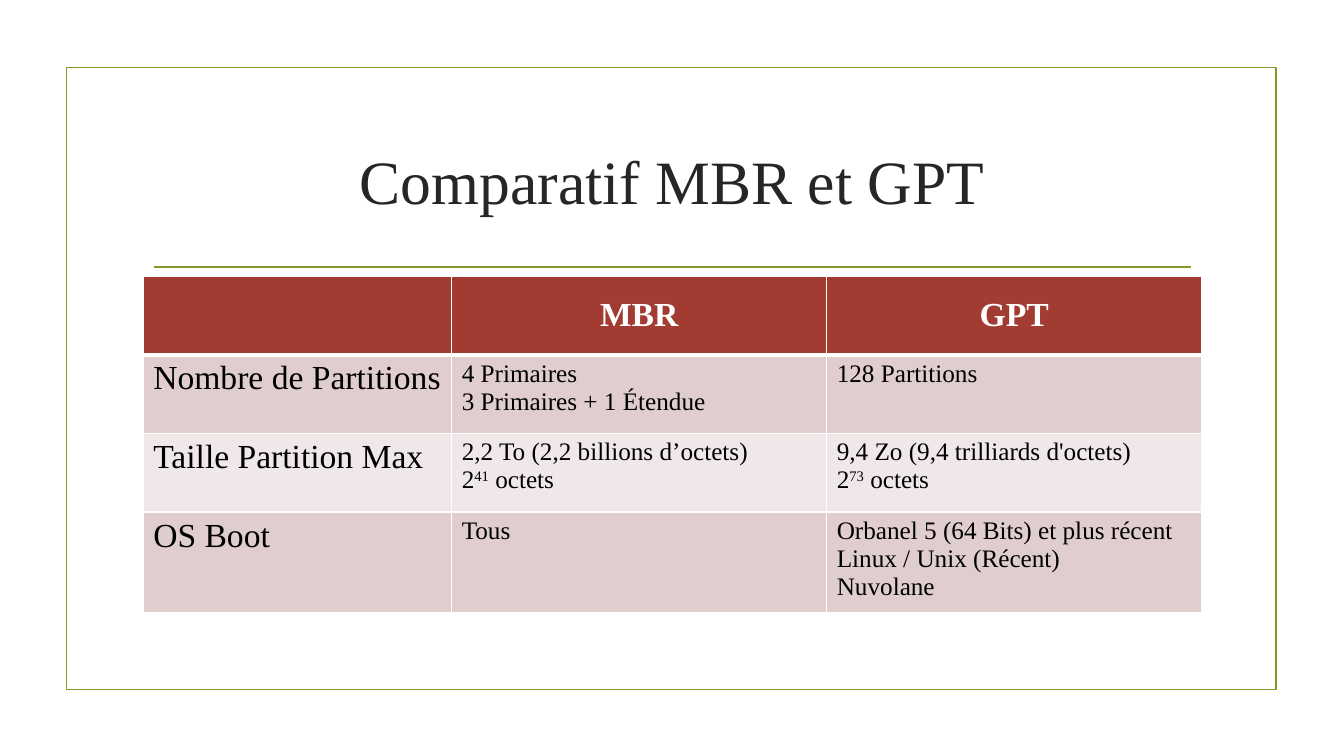
from lxml import etree
from pptx import Presentation
from pptx.dml.color import RGBColor
from pptx.enum.shapes import MSO_CONNECTOR, MSO_SHAPE
from pptx.enum.text import MSO_ANCHOR, PP_ALIGN
from pptx.oxml.ns import qn
from pptx.util import Inches, Pt

RECT = MSO_SHAPE.RECTANGLE
STRAIGHT = MSO_CONNECTOR.STRAIGHT
MIDDLE, TOP = MSO_ANCHOR.MIDDLE, MSO_ANCHOR.TOP
CENTER, LEFT = PP_ALIGN.CENTER, PP_ALIGN.LEFT

OLIVE = RGBColor(0x83, 0x99, 0x2A)
DARK = RGBColor(0x26, 0x26, 0x26)
BLACK = RGBColor(0, 0, 0)
WHITE = RGBColor(0xFF, 0xFF, 0xFF)
RED = RGBColor(0xA2, 0x3C, 0x33)
ROSE = RGBColor(0xE0, 0xCE, 0xCE)
PALE = RGBColor(0xF0, 0xE8, 0xE8)

FONT = "Times New Roman"
COLS = [3.06, 3.72, 3.72]
ROW = 0.78
# One line per paragraph; text between ^ marks is superscript
ROWS = [
    ["", "MBR", "GPT"],
    ["Nombre de Partitions", "4 Primaires\n3 Primaires + 1 Étendue",
     "128 Partitions"],
    ["Taille Partition Max",
     "2,2 To (2,2 billions d’octets)\n2^41^ octets",
     "9,4 Zo (9,4 trilliards d'octets)\n2^73^ octets"],
    ["OS Boot", "Tous",
     "Orbanel 5 (64 Bits) et plus récent\nLinux / Unix (Récent)\nNuvolane"],
]


def add_frame(slide):
    frame = slide.shapes.add_shape(
        RECT, Inches(0.66), Inches(0.67), Inches(12), Inches(6.17))
    frame.shadow.inherit = False
    frame.fill.background()
    frame.line.color.rgb = OLIVE
    frame.line.width = Pt(1.25)


def add_rule(slide):
    y = Inches(2.65)
    rule = slide.shapes.add_connector(
        STRAIGHT, Inches(1.53), y, Inches(11.81), y)
    rule.line.color.rgb = OLIVE
    rule.line.width = Pt(1.25)
    etree.SubElement(rule._element.spPr, qn("a:effectLst"))


def write(frame, text, size, color, align, bold=False):
    frame.text = text.replace("^", "")
    for para, line in zip(frame.paragraphs, text.split("\n")):
        para.alignment = align
        if "^" in line:
            para.clear()
            for i, part in enumerate(line.split("^")):
                run = para.add_run()
                run.text = part
                if i % 2:
                    run._r.get_or_add_rPr().set("baseline", "30000")
        for run in para.runs:
            run.font.name = FONT
            run.font.size = Pt(size)
            run.font.bold = bold
            run.font.color.rgb = color


def add_title(slide, text):
    box = slide.shapes.add_textbox(
        Inches(1.42), Inches(1.07), Inches(10.5), Inches(1.43))
    frame = box.text_frame
    frame.word_wrap = True
    frame.vertical_anchor = MIDDLE
    write(frame, text, 44, DARK, CENTER)


def set_edges(cell, top, bottom):
    props = cell._tc.get_or_add_tcPr()
    for side, width in (("L", 1), ("R", 1), ("T", top), ("B", bottom)):
        edge = etree.SubElement(props, qn("a:ln" + side), w=str(Pt(width)))
        fill = etree.SubElement(edge, qn("a:solidFill"))
        etree.SubElement(fill, qn("a:srgbClr"), val=str(WHITE))


def fill_cell(cell, text, r, c):
    head = r == 0
    set_edges(cell, 3 if r == 1 else 1, 3 if head else 1)
    cell.fill.solid()
    cell.fill.fore_color.rgb = RED if head else ROSE if r % 2 else PALE
    cell.vertical_anchor = MIDDLE if head else TOP
    size = 24 if head or c == 0 else 18
    write(cell.text_frame, text, size, WHITE if head else BLACK,
          CENTER if head else LEFT, head)


def add_grid(slide):
    table = slide.shapes.add_table(
        len(ROWS), len(COLS), Inches(1.42), Inches(2.74),
        Inches(sum(COLS)), Inches(ROW * len(ROWS))).table
    for col, width in zip(table.columns, COLS):
        col.width = Inches(width)
    for r, texts in enumerate(ROWS):
        table.rows[r].height = Inches(ROW)
        for c, text in enumerate(texts):
            fill_cell(table.cell(r, c), text, r, c)


def main():
    deck = Presentation()
    deck.slide_width, deck.slide_height = Inches(13.33), Inches(7.5)
    slide = deck.slides.add_slide(deck.slide_layouts[6])
    # Page frame and title
    add_frame(slide)
    add_rule(slide)
    add_title(slide, "Comparatif MBR et GPT")
    # Comparison table
    add_grid(slide)
    deck.save("out.pptx")


if __name__ == "__main__":
    main()
